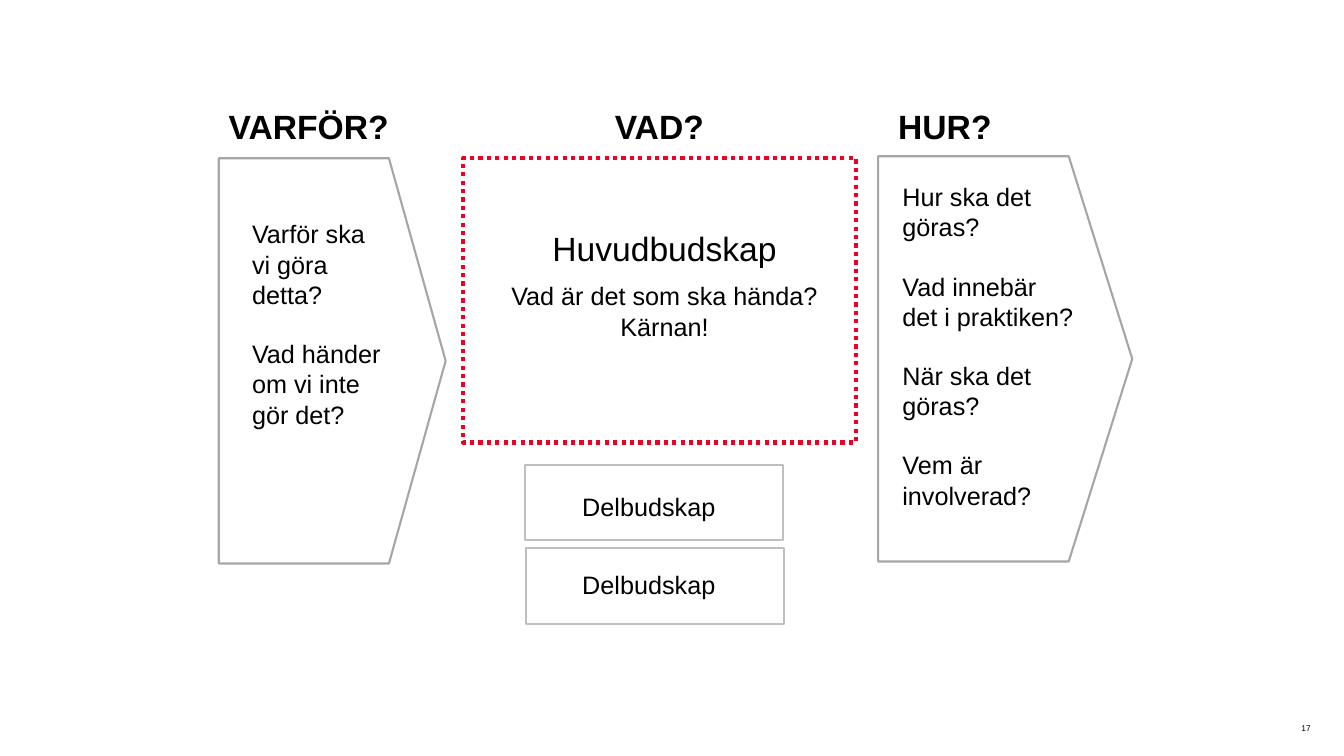
from pptx import Presentation
from pptx.dml.color import RGBColor
from pptx.enum.dml import MSO_LINE
from pptx.enum.shapes import MSO_SHAPE
from pptx.enum.text import PP_ALIGN
from pptx.oxml.ns import qn
from pptx.util import Inches, Pt
from lxml.etree import SubElement

HEADINGS = ["VARFÖR?", "VAD?", "HUR?"]
HEADING_TABS = [3.83, 6.64]
WHY = ["Varför ska vi göra detta?", "Vad händer om vi inte gör det?"]
HOW = ["Hur ska det göras?", "Vad innebär det i praktiken?",
       "När ska det göras?", "Vem är involverad?"]
MAIN = ["Huvudbudskap", "Vad är det som ska hända? Kärnan!"]
PART = "Delbudskap"
PART_ROWS = [(5.21, 4.61, 4.93), (5.22, 5.44, 5.71)]
PAGE_NUMBER = "17"
BLANK_LINE = 20.7


def color(value):
    return RGBColor.from_string(value)


def add_outline(kind, place, line, width=1.5, fill=None):
    shape = page.shapes.add_shape(kind, *map(Inches, place))
    shape.shadow.inherit = False
    if fill:
        shape.fill.solid()
        shape.fill.fore_color.rgb = color(fill)
    else:
        shape.fill.background()
    shape.line.color.rgb = color(line)
    shape.line.width = Pt(width)
    return shape


def add_text(place, lines, size=18, align=PP_ALIGN.LEFT, gap=0, spacing=None, inset=(0, 0)):
    box = page.shapes.add_textbox(*map(Inches, place))
    frame = box.text_frame
    frame.word_wrap = True
    frame.margin_left = frame.margin_right = Inches(inset[0])
    frame.margin_top = frame.margin_bottom = Inches(inset[1])
    for index, line in enumerate(lines):
        para = frame.paragraphs[0] if index == 0 else frame.add_paragraph()
        para.text = line
        para.alignment = align
        if index:
            para.space_before = Pt(gap)
        if spacing:
            para.line_spacing = spacing
        para.font.name = "Arial"
        para.font.size = Pt(size)
        para.font.color.rgb = color("000000")
    return frame.paragraphs


deck = Presentation()
deck.slide_width, deck.slide_height = Inches(13.33), Inches(7.5)
page = deck.slides.add_slide(deck.slide_layouts[6])

heading = add_text((2.17, 1, 8.83, 0.5), ["\t".join(HEADINGS)], 24, inset=(0.1, 0.05))[0]
heading.font.bold = True
tab_list = SubElement(heading._p.get_or_add_pPr(), qn("a:tabLst"))
heading._p.pPr.insert(0, tab_list)
for position in HEADING_TABS:
    SubElement(tab_list, qn("a:tab"), pos=str(Inches(position)), algn="l")

for place, text_place, questions in [
    ((2.17, 1.57, 2.25, 4.02), (2.5, 2.17, 1.33, 2.12), WHY),
    ((8.71, 1.55, 2.52, 4.02), (8.95, 1.8, 1.73, 3.33), HOW),
]:
    arrow = add_outline(MSO_SHAPE.PENTAGON, place, "A6A6A6", fill="FFFFFF")
    arrow.adjustments[0] = 0.25
    add_text(text_place, questions, gap=BLANK_LINE)

core = add_outline(MSO_SHAPE.RECTANGLE, (4.59, 1.57, 3.9, 2.82), "ED0026", 3)
core.line.dash_style = MSO_LINE.ROUND_DOT
message = add_text((4.88, 2.26, 3.42, 1.67), MAIN, align=PP_ALIGN.CENTER, gap=9)
message[0].font.size = Pt(24)

for left, top, text_top in PART_ROWS:
    add_outline(MSO_SHAPE.RECTANGLE, (left, top, 2.56, 0.75), "BFBFBF")
    add_text((4.81, text_top, 3.25, 0.24), [PART], align=PP_ALIGN.CENTER, spacing=0.8)

add_text((12.33, 7.17, 0.67, 0.1), [PAGE_NUMBER], 6, PP_ALIGN.RIGHT)

deck.save("out.pptx")
